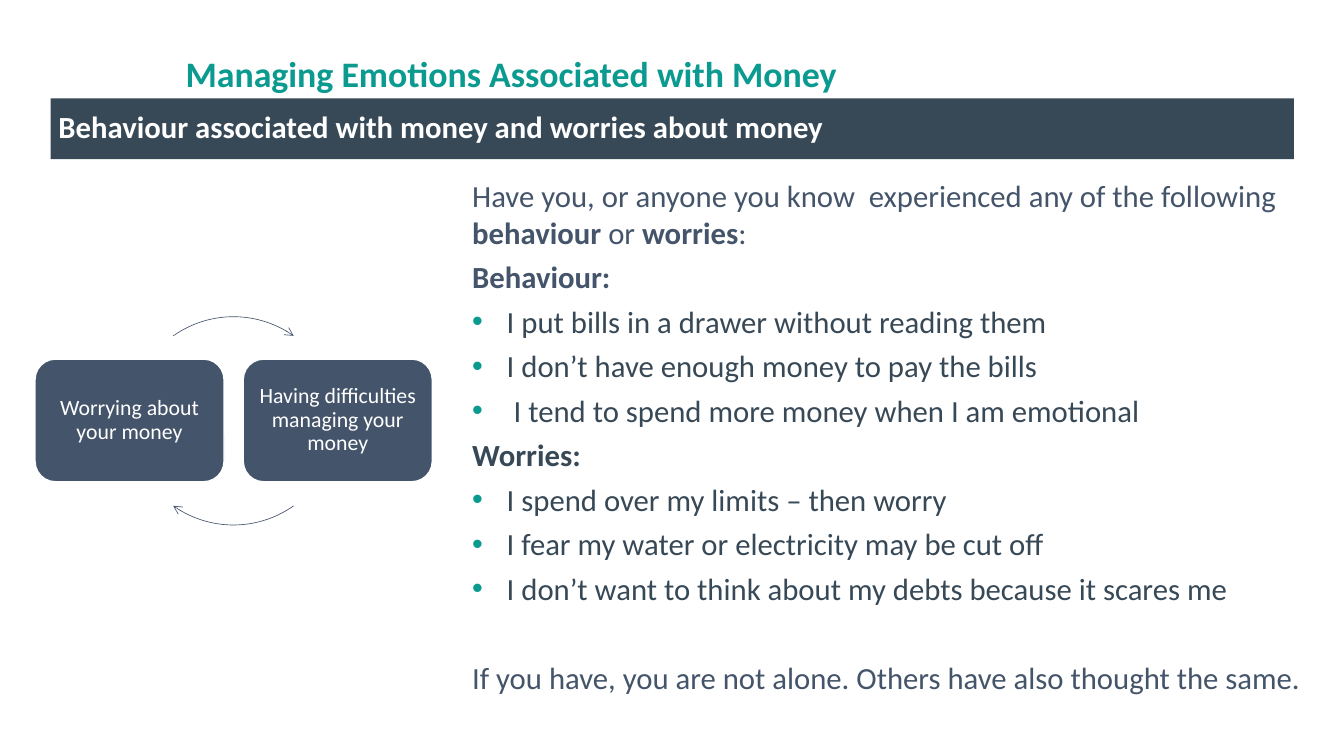
"""Build the slide on managing emotions associated with money."""
from lxml import etree
from pptx import Presentation
from pptx.dml.color import RGBColor
from pptx.enum.shapes import MSO_SHAPE as Shape
from pptx.enum.text import MSO_ANCHOR as Anchor, PP_ALIGN as Align
from pptx.oxml.ns import qn
from pptx.util import Pt

COLOURS = {"teal": "0A9A8F", "slate": "374856", "blue": "44546A", "white": "FFFFFF"}
FONT = "Calibri"

INTRO = [
    ("Have you, or anyone you know  experienced any of the following ", False),
    ("behaviour", True), (" or ", False), ("worries", True), (":", False),
]
BEHAVIOUR = [
    "I put bills in a drawer without reading them",
    "I don’t have enough money to pay the bills",
    " I tend to spend more money when I am emotional",
]
WORRIES = [
    "I spend over my limits – then worry",
    "I fear my water or electricity may be cut off",
    "I don’t want to think about my debts because it scares me",
]
CLOSING = "If you have, you are not alone. Others have also thought the same."
CARDS = ["Worrying about your money", "Having difficulties managing your money"]


def colour(name):
    """Return the named colour."""
    return RGBColor.from_string(COLOURS[name])


def add_bullet(para):
    """Give a paragraph a teal bullet and a hanging indent."""
    props = para._p.get_or_add_pPr()
    props.set("marL", str(Pt(27)))
    props.set("indent", str(-Pt(27)))
    tint = etree.SubElement(props, qn("a:buClr"))
    etree.SubElement(tint, qn("a:srgbClr")).set("val", COLOURS["teal"])
    etree.SubElement(props, qn("a:buFont")).set("typeface", "Arial")
    etree.SubElement(props, qn("a:buChar")).set("char", "•")


def write(para, text, size=24, ink="slate", bold=False, align=Align.LEFT,
          spacing=None, before=0, after=0, bullet=False):
    """Write a string, or (string, bold) pairs, into a paragraph."""
    para.alignment = align
    para.line_spacing = spacing
    para.space_before, para.space_after = Pt(before), Pt(after)
    if bullet:
        add_bullet(para)
    for words, heavy in [(text, bold)] if isinstance(text, str) else text:
        span = para.add_run()
        span.text = words
        span.font.name, span.font.size = FONT, Pt(size)
        span.font.bold = heavy
        span.font.color.rgb = colour(ink)


def set_frame(box, anchor=Anchor.MIDDLE, side=6, edge=3.6):
    """Set wrapping, anchor and margins, and return the first paragraph."""
    frame = box.text_frame
    frame.word_wrap = True
    frame.vertical_anchor = anchor
    frame.margin_left = frame.margin_right = Pt(side)
    frame.margin_top = frame.margin_bottom = Pt(edge)
    return frame.paragraphs[0]


def add_box(page, *place, anchor=Anchor.MIDDLE):
    """Add a text box and return it with its first paragraph."""
    box = page.shapes.add_textbox(*map(Pt, place))
    return box, set_frame(box, anchor)


def add_figure(page, kind, *place, fill=None, line=None, width=1):
    """Add a preset shape without a shadow."""
    figure = page.shapes.add_shape(kind, *map(Pt, place))
    figure.shadow.inherit = False
    if fill:
        figure.fill.solid()
        figure.fill.fore_color.rgb = colour(fill)
    else:
        figure.fill.background()
    if line:
        figure.line.color.rgb = colour(line)
        figure.line.width = Pt(width)
    else:
        figure.line.fill.background()
    return figure


def add_arc(page, start, end):
    """Add a clockwise arrow between two angles in degrees."""
    arc = add_figure(page, Shape.ARC, 101, 247.6, 162.8, 162.8, line="blue", width=0.5)
    for index, angle in enumerate((start, end)):
        arc.adjustments[index] = angle * 0.6
    etree.SubElement(arc.line._get_or_add_ln(), qn("a:tailEnd")).set("type", "arrow")


def add_heading(page):
    """Add the title and the dark subtitle bar."""
    _, para = add_box(page, 139, 31, 567.4, 56.9)
    write(para, "Managing Emotions Associated with Money", size=28, ink="teal",
          bold=True, spacing=0.9)
    bar = add_figure(page, Shape.RECTANGLE, 39.6, 77, 971.3, 47.5, fill="slate")
    write(set_frame(bar), "Behaviour associated with money and worries about money",
          ink="white", bold=True, align=Align.JUSTIFY, spacing=0.9)


def add_cycle(page):
    """Add the two cards and the arrows that link them in a circle."""
    for index, text in enumerate(CARDS):
        card = add_figure(page, Shape.ROUNDED_RECTANGLE, 27.4 + index * 162.7, 280.8,
                          147.6, 95.8, fill="blue", line="white")
        write(set_frame(card, side=5, edge=5), text, size=17, ink="white",
              align=Align.CENTER, spacing=0.9)
    for middle in (270, 90):
        add_arc(page, middle - 35.3, middle + 35.3)


def add_questions(page):
    """Add the list of behaviours and worries."""
    box, para = add_box(page, 362.9, 134.6, 659.5, 451.4, anchor=Anchor.TOP)
    write(para, INTRO, ink="blue", after=6)
    groups = [("Behaviour:", "blue", BEHAVIOUR), ("Worries:", "slate", WORRIES)]
    for heading, ink, items in groups:
        write(box.text_frame.add_paragraph(), heading, ink=ink, bold=True, after=6)
        for item in items:
            write(box.text_frame.add_paragraph(), item, after=6, bullet=True)
    write(box.text_frame.add_paragraph(), CLOSING, ink="blue", before=35, after=6)


def main():
    """Build and save the deck."""
    deck = Presentation()
    deck.slide_width, deck.slide_height = Pt(1050), Pt(591)
    page = deck.slides.add_slide(deck.slide_layouts[6])
    add_questions(page)
    add_heading(page)
    add_cycle(page)
    deck.save("out.pptx")


if __name__ == "__main__":
    main()
